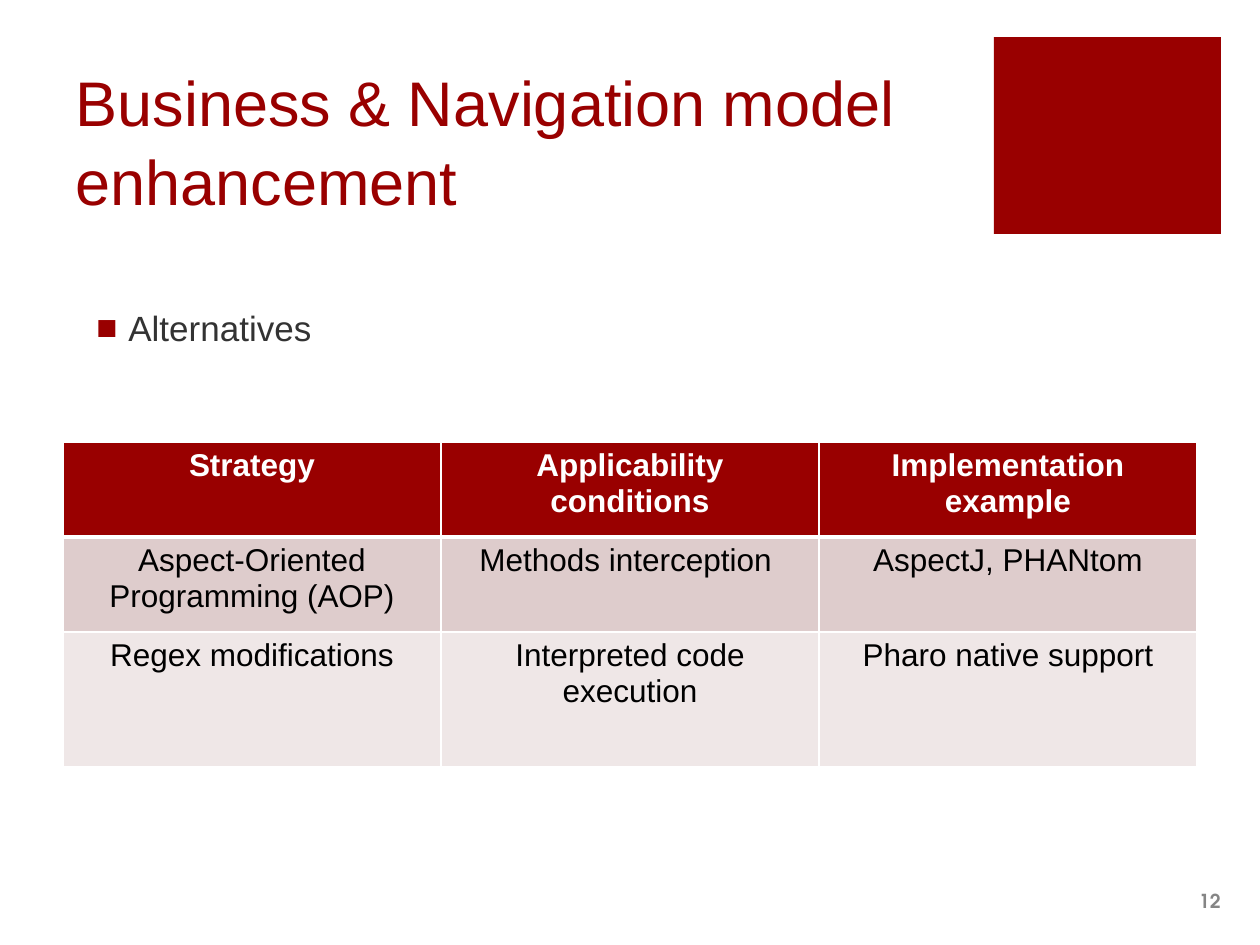
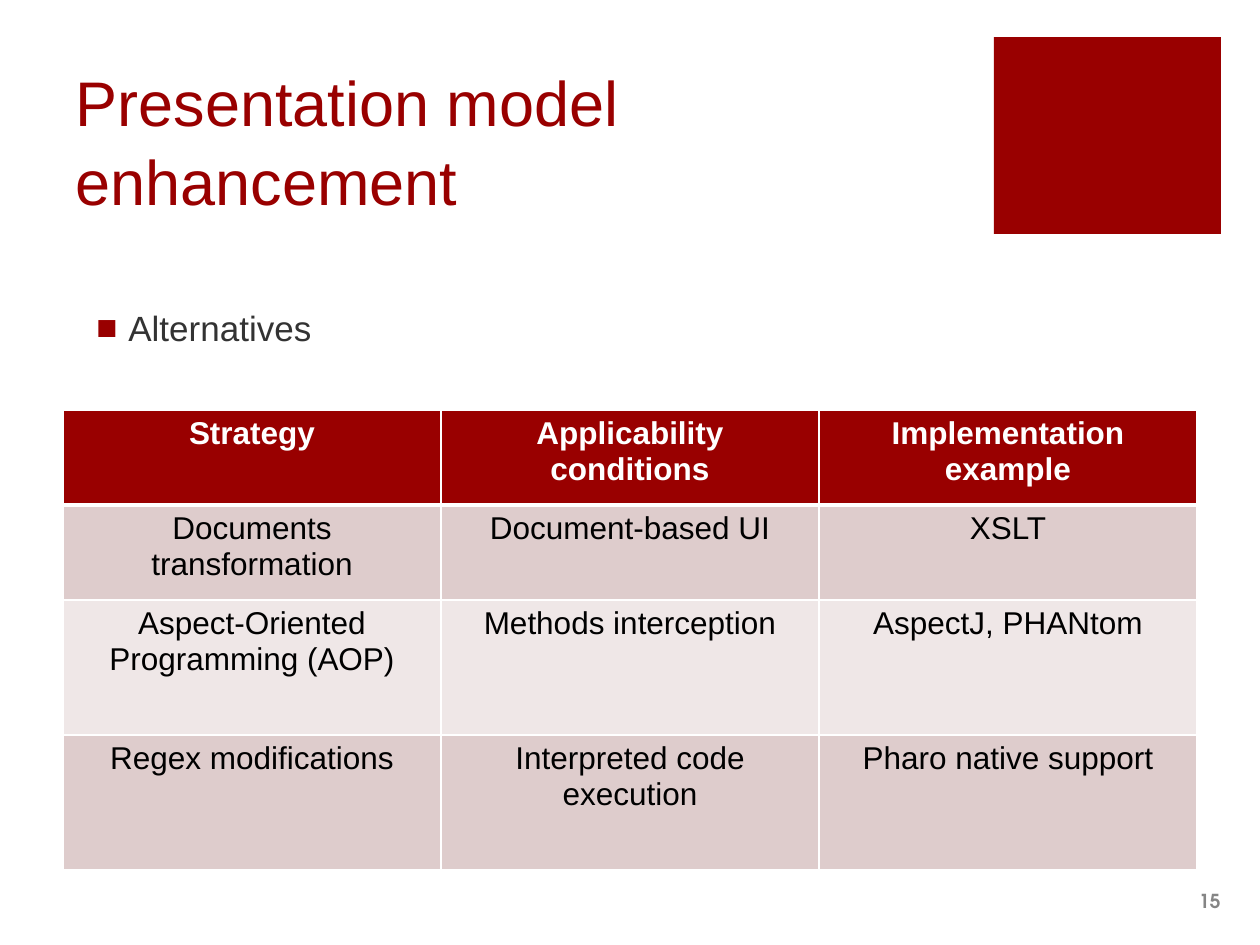
import pptx
import pptx.dml.color
import pptx.enum.shapes
import pptx.enum.text
import pptx.oxml
import pptx.oxml.ns
import pptx.util
from lxml import etree

PX = 914400 / 126
COLORS = {
    "accent": "990000",
    "white": "FFFFFF",
    "black": "000000",
    "body": "333333",
    "number": "858585",
    "odd_row": "DECCCC",
    "even_row": "EFE7E7",
}
BODY_FONT = "Arial"
NUMBER_FONT = "TeX Gyre Adventor"
ALIGN = pptx.enum.text.PP_ALIGN
MIDDLE = pptx.enum.text.MSO_ANCHOR.MIDDLE
COLUMN_WIDTH = 378
HEADINGS = ["Strategy", "Applicability conditions", "Implementation example"]

SLIDES = [
    {
        "title": "Business & Navigation model enhancement",
        "number": 12,
        "table_top": 442,
        "row_heights": [95, 95, 135],
        "strategies": [
            ["Aspect-Oriented Programming (AOP)", "Methods interception ", "AspectJ, PHANtom"],
            ["Regex modifications", "Interpreted code execution", "Pharo native support"],
        ],
    },
    {
        "title": "Presentation model enhancement",
        "number": 15,
        "table_top": 410,
        "row_heights": [95, 95, 135, 135],
        "strategies": [
            ["Documents transformation", "Document-based UI", "XSLT"],
            ["Aspect-Oriented Programming (AOP)", "Methods interception", "AspectJ, PHANtom"],
            ["Regex modifications", "Interpreted code execution", "Pharo native support"],
        ],
    },
]


def emu(px):
    return pptx.util.Emu(round(px * PX))


def box(*lengths):
    return [emu(length) for length in lengths]


def rgb(name):
    return pptx.dml.color.RGBColor.from_string(COLORS[name])


def write(frame, text, size, color, font=BODY_FONT, bold=False,
          align=ALIGN.LEFT, anchor=None, line_spacing=None):
    """Fill the frame with one formatted paragraph and return it."""
    frame.word_wrap = True
    if anchor is not None:
        frame.vertical_anchor = anchor
    paragraph = frame.paragraphs[0]
    paragraph.alignment = align
    paragraph.line_spacing = line_spacing
    run = paragraph.add_run()
    run.text = text
    run.font.size = pptx.util.Pt(size)
    run.font.name = font
    run.font.bold = bold
    run.font.color.rgb = rgb(color)
    return paragraph


def add_bullet(paragraph, indent, color):
    properties = paragraph._p.get_or_add_pPr()
    properties.set("marL", str(emu(indent)))
    properties.set("indent", str(-emu(indent)))
    qn = pptx.oxml.ns.qn
    bullet_color = etree.SubElement(properties, qn("a:buClr"))
    etree.SubElement(bullet_color, qn("a:srgbClr"), val=COLORS[color])
    etree.SubElement(properties, qn("a:buFont"), typeface=BODY_FONT)
    etree.SubElement(properties, qn("a:buChar"), char="■")


def add_borders(cell, top, bottom):
    """Draw white cell borders; widths are points and the sides are 1."""
    qn = pptx.oxml.ns.qn
    properties = cell._tc.get_or_add_tcPr()
    for side, width in (("L", 1), ("R", 1), ("T", top), ("B", bottom)):
        line = etree.SubElement(properties, qn(f"a:ln{side}"), w=str(pptx.util.Pt(width)))
        fill = etree.SubElement(line, qn("a:solidFill"))
        etree.SubElement(fill, qn("a:srgbClr"), val=COLORS["white"])


class Deck:
    """Holds the presentation, its shared style and the current slide."""

    def __init__(self):
        self.presentation = pptx.Presentation()
        self.presentation.slide_width = emu(1260)
        self.presentation.slide_height = emu(945)
        self.slide = None

    def start_slide(self, title, number):
        self.slide = self.presentation.slides.add_slide(self.presentation.slide_layouts[5])
        self.add_title(title)
        self.add_number(number)
        self.add_corner_square()

    def add_title(self, text):
        title = self.slide.shapes.title
        title.left, title.top, title.width, title.height = box(63, 37, 897, 197)
        frame = title.text_frame
        frame.auto_size = pptx.enum.text.MSO_AUTO_SIZE.NONE
        frame.margin_bottom = 0
        write(frame, text, 36, "accent", anchor=MIDDLE, line_spacing=1.05)

    def add_number(self, number):
        holder = self.slide.shapes.add_textbox(*box(1121, 876, 112, 50))
        write(holder.text_frame, str(number), 11, "number", font=NUMBER_FONT,
              bold=True, align=ALIGN.RIGHT, anchor=MIDDLE)

    def add_corner_square(self):
        square = self.slide.shapes.add_shape(
            pptx.enum.shapes.MSO_SHAPE.RECTANGLE, *box(994, 37, 227, 197))
        square.shadow.inherit = False
        square.fill.solid()
        square.fill.fore_color.rgb = rgb("accent")
        square.line.fill.background()

    def add_bullet_text(self, text):
        holder = self.slide.shapes.add_textbox(*box(84, 296, 1158, 570))
        paragraph = write(holder.text_frame, text, 20, "body", line_spacing=1.1)
        paragraph.space_before = pptx.util.Pt(18)
        add_bullet(paragraph, 32, "accent")

    def add_strategy_table(self, top, row_heights, strategies):
        rows = [HEADINGS] + strategies
        table = self.slide.shapes.add_table(
            len(rows), len(HEADINGS),
            *box(63, top, COLUMN_WIDTH * len(HEADINGS), sum(row_heights))).table
        table.horz_banding = False
        for column in table.columns:
            column.width = emu(COLUMN_WIDTH)
        for index, (texts, height) in enumerate(zip(rows, row_heights)):
            table.rows[index].height = emu(height)
            heading = index == 0
            fill = "accent" if heading else "odd_row" if index % 2 else "even_row"
            for column, text in enumerate(texts):
                cell = table.cell(index, column)
                add_borders(cell, top=3 if index == 1 else 1, bottom=3 if heading else 1)
                cell.fill.solid()
                cell.fill.fore_color.rgb = rgb(fill)
                write(cell.text_frame, text, 18, "white" if heading else "black",
                      bold=heading, align=ALIGN.CENTER)


def main():
    deck = Deck()
    for content in SLIDES:
        deck.start_slide(content["title"], content["number"])
        deck.add_strategy_table(
            content["table_top"], content["row_heights"], content["strategies"])
        deck.add_bullet_text("Alternatives")
    deck.presentation.save("out.pptx")


if __name__ == "__main__":
    main()
